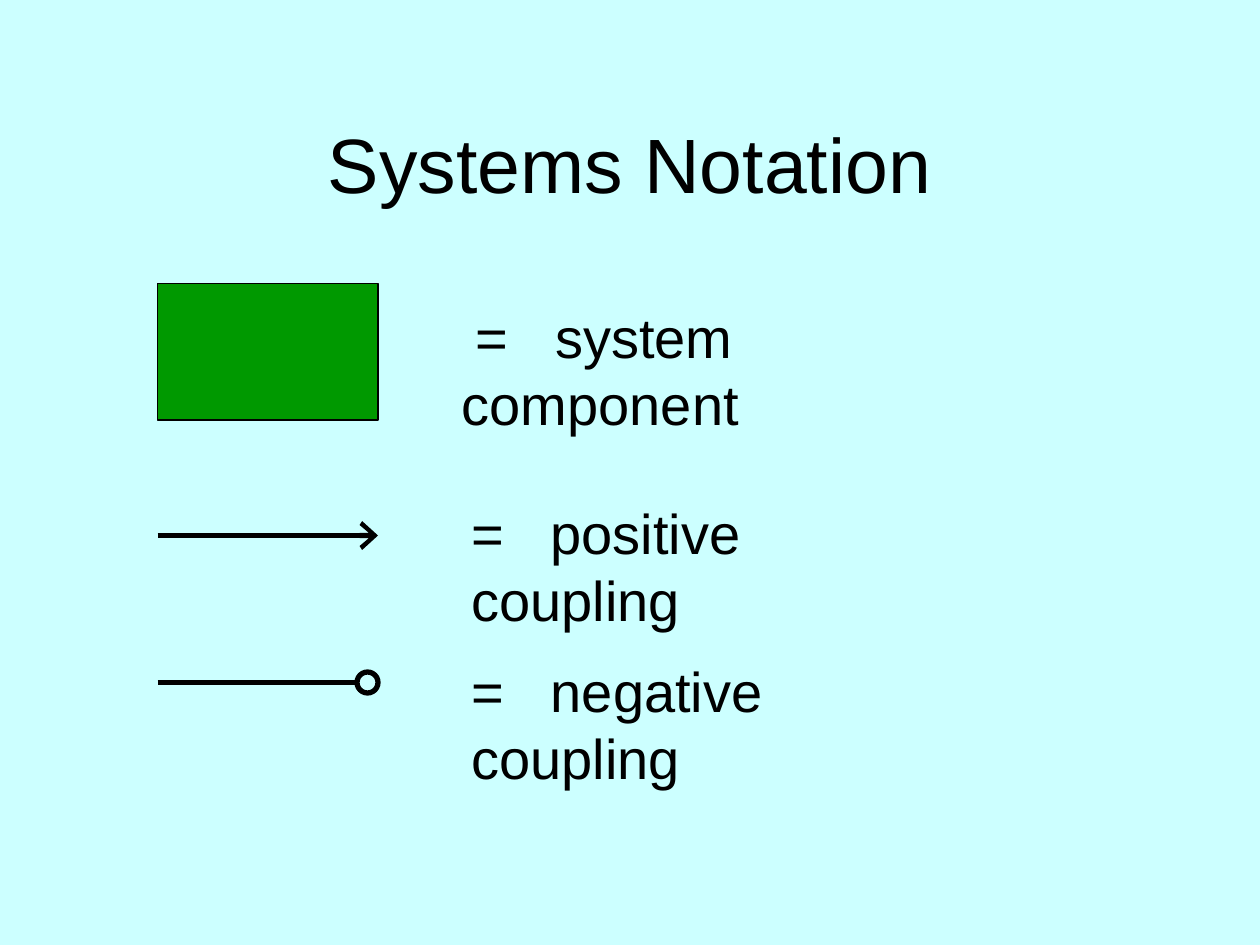
from dataclasses import dataclass

from pptx import Presentation
from pptx.dml.color import RGBColor as Color
from pptx.enum.shapes import MSO_CONNECTOR as Connector, MSO_SHAPE as Shape
from pptx.enum.text import MSO_ANCHOR as Anchor, PP_ALIGN as Align
from pptx.oxml.ns import qn
from pptx.util import Inches, Pt
from lxml.etree import SubElement


@dataclass(frozen=True)
class Theme:
    background: Color = Color(0xCC, 0xFF, 0xFF)
    component: Color = Color(0x00, 0x99, 0x00)
    ink: Color = Color(0x00, 0x00, 0x00)
    font: str = "Arial"
    title_size: int = 44
    label_size: int = 32
    label_gap: int = 1780
    outline: float = 0.75
    coupling: int = 3


theme = Theme()
presentation = Presentation()
presentation.slide_width = Inches(10)
presentation.slide_height = Inches(7.5)
column = presentation.slide_width / 120
row = presentation.slide_height / 90


def grid(left, top, width, height):
    return [round(value) for value in (left * column, top * row, width * column, height * row)]


def add_text(paragraph, text, size, spacing=0):
    run = paragraph.add_run()
    run.text = text
    run.font.name = theme.font
    run.font.size = Pt(size)
    run.font.color.rgb = theme.ink
    if spacing:
        run._r.get_or_add_rPr().set("spc", str(spacing))


slide = presentation.slides.add_slide(presentation.slide_layouts[5])
slide.background.fill.solid()
slide.background.fill.fore_color.rgb = theme.background

title = slide.shapes.title
title.left, title.top, title.width, title.height = grid(9, 8, 102, 15)
title.text_frame.vertical_anchor = Anchor.MIDDLE
paragraph = title.text_frame.paragraphs[0]
paragraph.alignment = Align.CENTER
add_text(paragraph, "Systems Notation", theme.title_size)

symbol_left, symbol_right = 15, 36
positive_row, negative_row = 51, 65
ring = 2

for kind, box, fill, weight in [
    (Shape.RECTANGLE, (symbol_left, 27, symbol_right - symbol_left, 13), theme.component, theme.outline),
    (Shape.OVAL, (symbol_right - ring, negative_row - ring / 2, ring, ring), None, theme.coupling),
]:
    shape = slide.shapes.add_shape(kind, *grid(*box))
    shape.shadow.inherit = False
    shape.line.color.rgb = theme.ink
    shape.line.width = Pt(weight)
    if fill is None:
        shape.fill.background()
    else:
        shape.fill.solid()
        shape.fill.fore_color.rgb = fill

for line_row, line_right, has_arrow in [
    (positive_row, symbol_right, True),
    (negative_row, symbol_right - ring, False),
]:
    left, top, right, bottom = grid(symbol_left, line_row, line_right, line_row)
    connector = slide.shapes.add_connector(Connector.STRAIGHT, left, top, right, bottom)
    connector.line.color.rgb = theme.ink
    connector.line.width = Pt(theme.coupling)
    if has_arrow:
        SubElement(connector.line._get_or_add_ln(), qn("a:tailEnd"), type="arrow", w="lg", len="med")
    SubElement(connector._element.spPr, qn("a:effectLst"))

for meaning, left, top, width, indent in [
    ("system component", 42.8, 28.2, 55, 0.11),
    ("positive coupling", 43.7, 46.9, 48, 0),
    ("negative coupling", 43.7, 61.9, 50, 0),
]:
    label = slide.shapes.add_textbox(*grid(left, top, width, 7.6))
    label.text_frame.word_wrap = True
    paragraph = label.text_frame.paragraphs[0]
    properties = paragraph._p.get_or_add_pPr()
    properties.set("marL", "0")
    properties.set("indent", str(Inches(indent)))
    add_text(paragraph, "=", theme.label_size)
    add_text(paragraph, " ", theme.label_size, theme.label_gap)
    add_text(paragraph, meaning, theme.label_size)

presentation.save("out.pptx")
